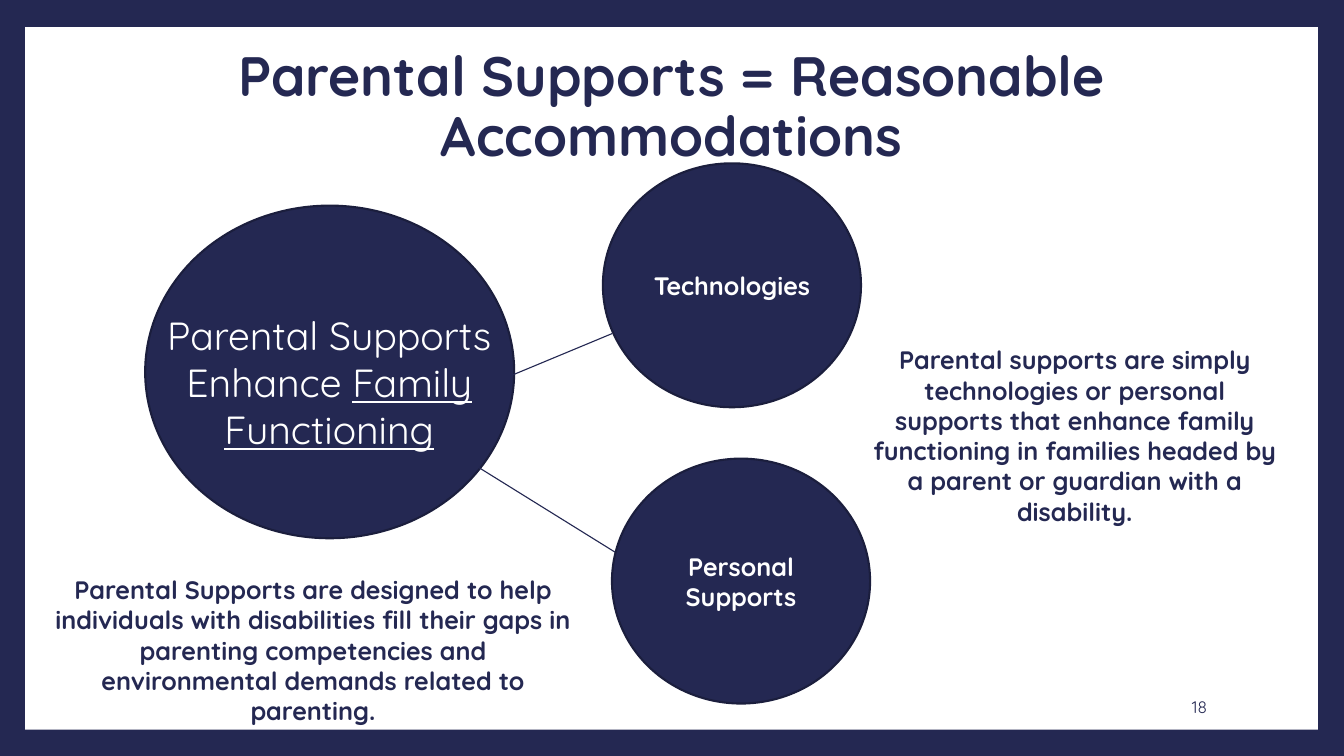
from pptx import Presentation
from pptx.dml.color import RGBColor
from pptx.enum.shapes import MSO_CONNECTOR, MSO_SHAPE
from pptx.enum.text import MSO_ANCHOR, PP_ALIGN
from pptx.oxml.ns import qn
from pptx.util import Inches, Pt

RECT, OVAL = MSO_SHAPE.RECTANGLE, MSO_SHAPE.OVAL
STRAIGHT = MSO_CONNECTOR.STRAIGHT
TOP, MIDDLE = MSO_ANCHOR.TOP, MSO_ANCHOR.MIDDLE
CENTER, RIGHT = PP_ALIGN.CENTER, PP_ALIGN.RIGHT
NAVY, EDGE, WHITE = "242852", "1B1E3D", "FFFFFF"
FONT = "Quicksand"


def color(code):
    return RGBColor.from_string(code)


def write(shape, text, size, code, bold=True, align=CENTER, anchor=MIDDLE):
    """Fill a shape with one paragraph and return it."""
    frame = shape.text_frame
    frame.word_wrap = True
    frame.vertical_anchor = anchor
    para = frame.paragraphs[0]
    para.text = text
    para.alignment = align
    para.font.name = FONT
    para.font.size = Pt(size)
    para.font.bold = bold
    para.font.color.rgb = color(code)
    return para


def add_text(slide, box, text, size, code=NAVY, **style):
    shape = slide.shapes.add_textbox(*map(Inches, box))
    return write(shape, text, size, code, **style)


def add_solid(slide, kind, box, fill, edge=None):
    shape = slide.shapes.add_shape(kind, *map(Inches, box))
    shape.shadow.inherit = False
    shape.fill.solid()
    shape.fill.fore_color.rgb = color(fill)
    if edge:
        shape.line.color.rgb = color(edge)
        shape.line.width = Pt(1.5)
    else:
        shape.line.fill.background()
    return shape


def add_link(slide, start, end):
    link = slide.shapes.add_connector(STRAIGHT, *map(Inches, start + end))
    link.line.color.rgb = color(NAVY)
    link.line.width = Pt(0.79)
    props = link._element.spPr
    props.append(props.makeelement(qn("a:effectLst"), {}))


def main():
    deck = Presentation()
    deck.slide_width, deck.slide_height = Inches(13.33), Inches(7.5)
    slide = deck.slides.add_slide(deck.slide_layouts[6])

    # Navy frame around a white panel
    back = slide.background.fill
    back.solid()
    back.fore_color.rgb = color(NAVY)
    add_solid(slide, RECT, (0.25, 0.27, 12.82, 6.97), WHITE)

    # Title
    title = add_text(slide, (0.63, 0.54, 12.06, 1.08),
                     "Parental Supports = Reasonable Accommodations", 39.6)
    title.line_spacing = 0.9

    # Main circle with its caption
    add_solid(slide, OVAL, (1.44, 2.04, 3.66, 3.3), NAVY, EDGE)
    goal = add_text(slide, (1.49, 3.04, 3.55, 1.51),
                    "Parental Supports Enhance ", 28, WHITE,
                    bold=False, anchor=TOP)
    focus = goal.add_run()
    focus.text = "Family Functioning"
    focus.font.underline = True

    # Two kinds of support, each linked to the main circle
    kinds = [
        ("Technologies", (5.98, 1.62, 2.56, 2.42), (4.94, 3.78), (6.07, 3.31)),
        ("Personal Supports", (6.07, 4.55, 2.56, 2.43),
         (4.51, 4.49), (6.12, 5.49)),
    ]
    for label, box, start, end in kinds:
        add_link(slide, start, end)
        write(add_solid(slide, OVAL, box, NAVY, EDGE), label, 18, WHITE)

    # Explanations
    add_text(slide, (0.42, 5.65, 5.37, 1.62),
             "Parental Supports are designed to help individuals with "
             "disabilities fill their gaps in parenting competencies and "
             "environmental demands related to parenting.", 18, anchor=TOP)
    add_text(slide, (8.54, 3.37, 4.24, 1.92),
             "Parental supports are simply technologies or personal supports "
             "that enhance family functioning in families headed by a parent "
             "or guardian with a disability.", 18, anchor=TOP)

    # Page number
    add_text(slide, (10.2, 6.81, 1.87, 0.4), "18", 12,
             bold=False, align=RIGHT)

    deck.save("out.pptx")


if __name__ == "__main__":
    main()
